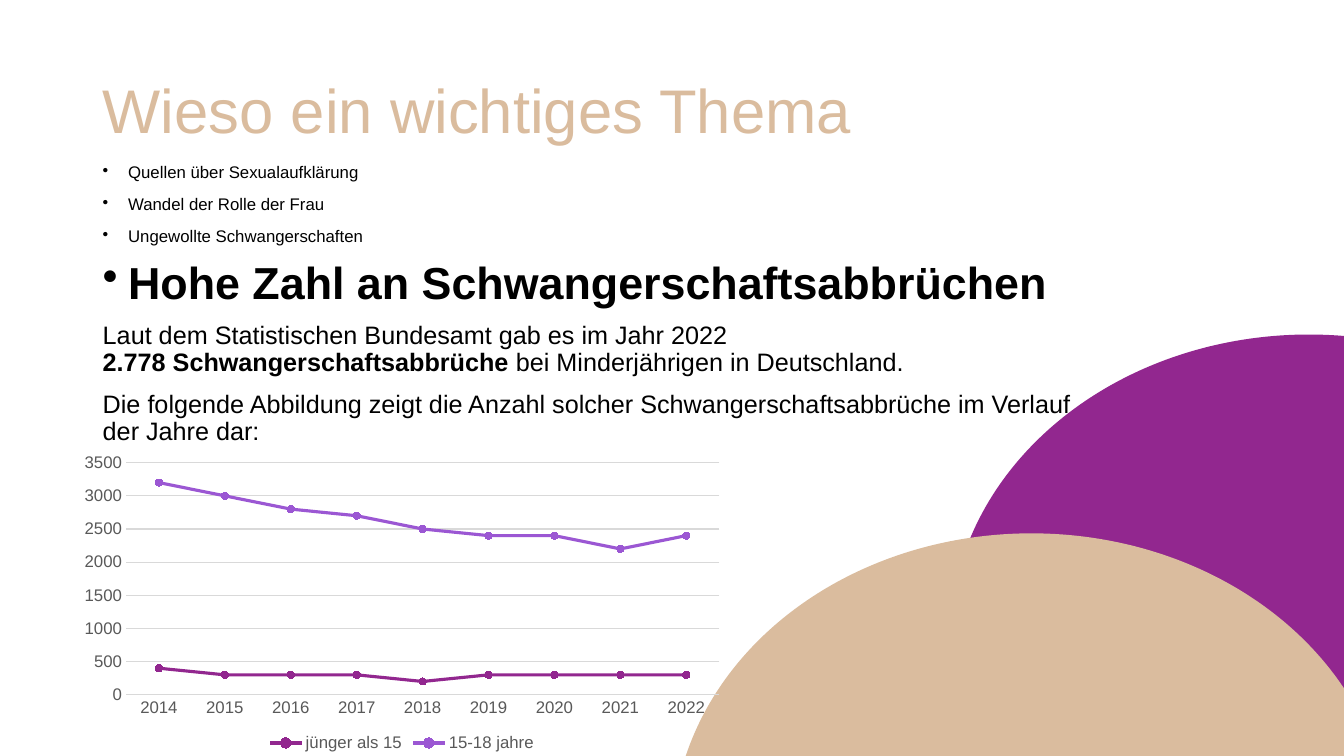
import dataclasses

import lxml.etree
import pptx
import pptx.chart.data
import pptx.dml.color
import pptx.enum.chart
import pptx.enum.shapes
import pptx.enum.text
import pptx.oxml.ns
import pptx.util
from pptx.util import Cm


@dataclasses.dataclass(frozen=True)
class Theme:
    font: str = "Arial"
    sand: str = "DABC9E"
    plum: str = "92278F"
    violet: str = "9B57D3"
    ink: str = "000000"
    axis_text: str = "595959"
    grid: str = "D9D9D9"
    title: int = 44
    headline: int = 32
    body: int = 18
    small: int = 12


theme = Theme()


def color(value):
    return pptx.dml.color.RGBColor.from_string(value)


def style_font(font, size, value, bold=False):
    font.name = theme.font
    font.size = pptx.util.Pt(size)
    font.bold = bold
    font.color.rgb = color(value)


deck = pptx.Presentation()
deck.slide_width, deck.slide_height = Cm(33.87), Cm(19.05)
page = deck.slides.add_slide(deck.slide_layouts[6])

# Title
title_box = page.shapes.add_textbox(Cm(2.34), Cm(1.02), Cm(29.21), Cm(3.68))
title_box.text_frame.word_wrap = True
title_box.text_frame.vertical_anchor = pptx.enum.text.MSO_ANCHOR.MIDDLE
title_para = title_box.text_frame.paragraphs[0]
title_para.text = "Wieso ein wichtiges Thema"
title_para.line_spacing = 0.9
style_font(title_para.runs[0].font, theme.title, theme.sand)

# Body: size, bulleted, spans with their weight
body_paras = [
    (theme.small, True, [("Quellen über Sexualaufklärung", False)]),
    (theme.small, True, [("Wandel der Rolle der Frau", False)]),
    (theme.small, True, [("Ungewollte Schwangerschaften", False)]),
    (theme.headline, True, [("Hohe Zahl an Schwangerschaftsabbrüchen", True)]),
    (theme.body, False, [
        ("Laut dem Statistischen Bundesamt gab es im Jahr 2022\v", False),
        ("2.778 Schwangerschaftsabbrüche ", True),
        ("bei Minderjährigen in Deutschland.", False),
    ]),
    (theme.body, False, [
        ("Die folgende Abbildung zeigt die Anzahl solcher "
         "Schwangerschaftsabbrüche im Verlauf der Jahre dar:", False),
    ]),
]
body_box = page.shapes.add_textbox(Cm(2.34), Cm(4.01), Cm(25.37), Cm(12.09))
body_frame = body_box.text_frame
body_frame.word_wrap = True
for index, (size, bulleted, spans) in enumerate(body_paras):
    para = body_frame.add_paragraph() if index else body_frame.paragraphs[0]
    para.line_spacing = 0.9
    para.space_before = pptx.util.Pt(10 if index else 0)
    if bulleted:
        properties = para._p.get_or_add_pPr()
        properties.set("marL", str(Cm(0.64)))
        properties.set("indent", str(-Cm(0.64)))
        bullet = lxml.etree.SubElement(properties, pptx.oxml.ns.qn("a:buChar"))
        bullet.set("char", "•")
    for text, bold in spans:
        span = para.add_run()
        span.text = text.rstrip("\v")
        style_font(span.font, size, theme.ink, bold)
        if text.endswith("\v"):
            para.add_line_break()

# Decorative ellipses
for left, top, fill in [(23.93, 8.43, theme.plum), (16.94, 13.44, theme.sand)]:
    ellipse = page.shapes.add_shape(
        pptx.enum.shapes.MSO_SHAPE.OVAL, Cm(left), Cm(top), Cm(18.11), Cm(15.42))
    ellipse.shadow.inherit = False
    ellipse.fill.solid()
    ellipse.fill.fore_color.rgb = color(fill)
    ellipse.line.fill.background()

# Line chart
chart_data = pptx.chart.data.CategoryChartData()
chart_data.categories = [str(year) for year in range(2014, 2023)]
chart_data.add_series("jünger als 15", [400, 300, 300, 300, 200, 300, 300, 300, 300])
chart_data.add_series("15-18 jahre", [3200, 3000, 2800, 2700, 2500, 2400, 2400, 2200, 2400])
chart = page.shapes.add_chart(
    pptx.enum.chart.XL_CHART_TYPE.LINE_MARKERS,
    Cm(1.8), Cm(11.28), Cm(16.66), Cm(7.77), chart_data).chart
chart.has_title = False
style_font(chart.font, theme.small, theme.axis_text)
chart.plots[0].vary_by_categories = False

for series, value in zip(chart.plots[0].series, [theme.plum, theme.violet]):
    series.smooth = False
    series.format.line.width = pptx.util.Pt(2.25)
    series.format.line.color.rgb = color(value)
    series.marker.style = pptx.enum.chart.XL_MARKER_STYLE.CIRCLE
    series.marker.size = 5
    series.marker.format.fill.solid()
    series.marker.format.fill.fore_color.rgb = color(value)
    series.marker.format.line.color.rgb = color(value)

# Axes and legend
years, counts = chart.category_axis, chart.value_axis
for axis in (years, counts):
    axis.major_tick_mark = pptx.enum.chart.XL_TICK_MARK.NONE
    axis.minor_tick_mark = pptx.enum.chart.XL_TICK_MARK.NONE
    style_font(axis.tick_labels.font, theme.small, theme.axis_text)
counts.minimum_scale, counts.maximum_scale, counts.major_unit = 0, 3500, 500
counts.format.line.fill.background()
counts.has_major_gridlines = True
for line in (years.format.line, counts.major_gridlines.format.line):
    line.width = pptx.util.Pt(0.75)
    line.color.rgb = color(theme.grid)
chart.has_legend = True
chart.legend.position = pptx.enum.chart.XL_LEGEND_POSITION.BOTTOM
chart.legend.include_in_layout = False
style_font(chart.legend.font, theme.small, theme.axis_text)

deck.save("out.pptx")
